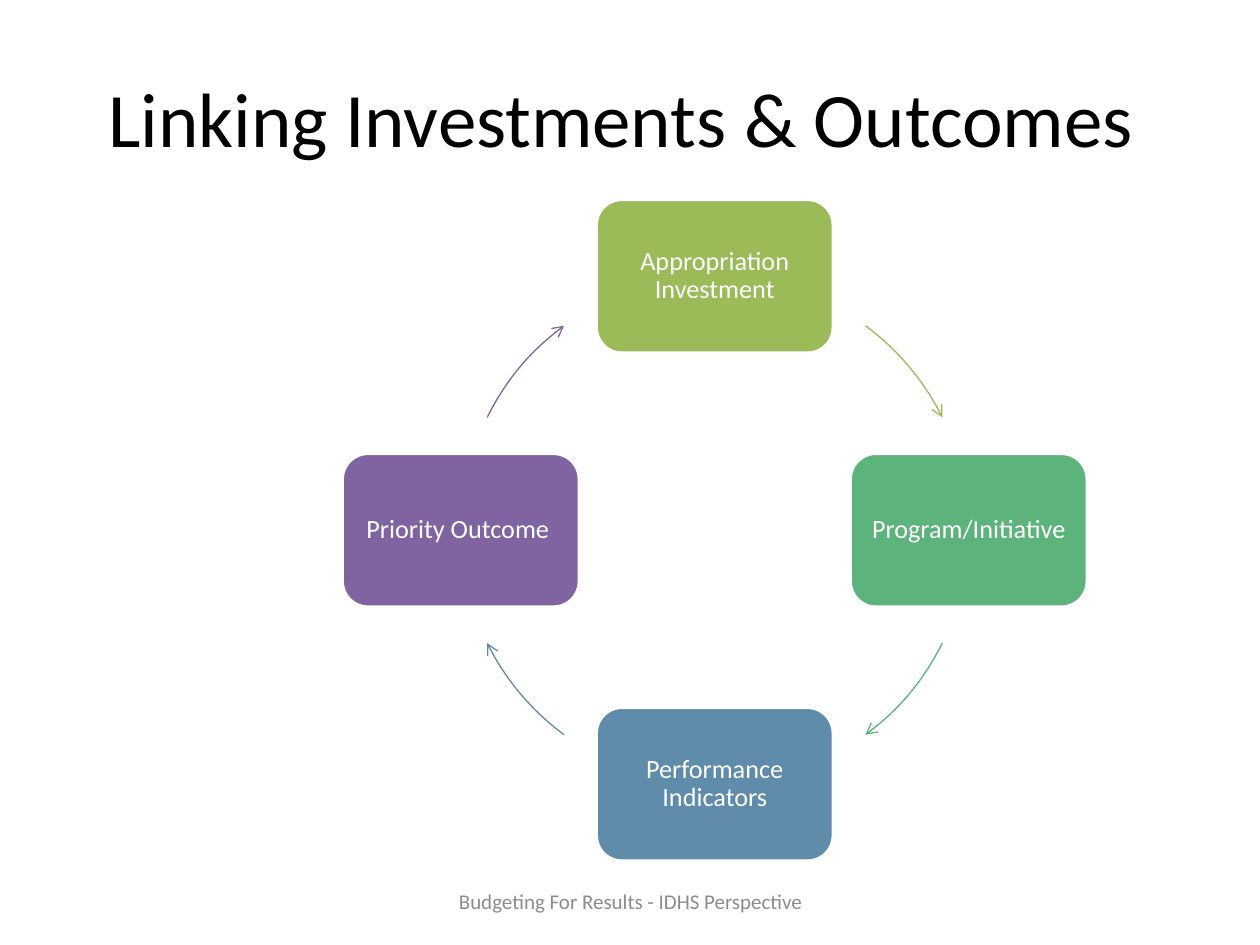
import math
from dataclasses import dataclass

import pptx
import pptx.dml.color
import pptx.enum.shapes
import pptx.enum.text
import pptx.oxml.ns
import pptx.util
from lxml import etree
from pptx.util import Cm

SHAPES = pptx.enum.shapes.MSO_SHAPE


@dataclass(frozen=True)
class Theme:
    font: str = "Calibri"
    black: str = "000000"
    white: str = "FFFFFF"
    gray: str = "8C8C8C"
    green: str = "9BBB59"
    teal: str = "5CB37C"
    blue: str = "608CAB"
    purple: str = "8064A2"
    title_size: float = 44
    box_size: float = 15
    footer_size: float = 12
    box_line: float = 2
    arrow_line: float = 0.75


class SlideBuilder:
    def __init__(self, slide, theme):
        self.slide = slide
        self.theme = theme

    def color(self, value):
        return pptx.dml.color.RGBColor.from_string(value)

    def set_text(self, shape, text, size, color):
        """Put one centred paragraph in the middle of a shape."""
        frame = shape.text_frame
        frame.text = text
        frame.word_wrap = True
        frame.vertical_anchor = pptx.enum.text.MSO_ANCHOR.MIDDLE
        paragraph = frame.paragraphs[0]
        paragraph.alignment = pptx.enum.text.PP_ALIGN.CENTER
        font = paragraph.runs[0].font
        font.name = self.theme.font
        font.size = pptx.util.Pt(size)
        font.color.rgb = self.color(color)
        return frame

    def text(self, left, top, width, height, text, size, color):
        box = self.slide.shapes.add_textbox(Cm(left), Cm(top), Cm(width), Cm(height))
        self.set_text(box, text, size, color)

    def outline(self, shape, color, width):
        shape.shadow.inherit = False
        shape.line.color.rgb = self.color(color)
        shape.line.width = pptx.util.Pt(width)

    def box(self, center_x, center_y, width, height, text, fill):
        shape = self.slide.shapes.add_shape(
            SHAPES.ROUNDED_RECTANGLE,
            Cm(center_x - width / 2), Cm(center_y - height / 2), Cm(width), Cm(height))
        shape.fill.solid()
        shape.fill.fore_color.rgb = self.color(fill)
        self.outline(shape, self.theme.white, self.theme.box_line)
        frame = self.set_text(shape, text, self.theme.box_size, self.theme.white)
        frame.margin_left = frame.margin_right = Cm(0.15)
        frame.margin_top = frame.margin_bottom = Cm(0.15)
        frame.paragraphs[0].line_spacing = 0.9

    def arc_arrow(self, center_x, center_y, radius, start, end, color):
        """Draw a clockwise arc between two angles in degrees, arrowhead at its end."""
        arc = self.slide.shapes.add_shape(
            SHAPES.ARC, Cm(center_x - radius), Cm(center_y - radius),
            Cm(2 * radius), Cm(2 * radius))
        # Angles are stored in 60000ths of a degree, adjustments in 100000ths.
        arc.adjustments[0] = start % 360 * 0.6
        arc.adjustments[1] = end % 360 * 0.6
        arc.fill.background()
        self.outline(arc, color, self.theme.arrow_line)
        line = arc.element.spPr.get_or_add_ln()
        etree.SubElement(line, pptx.oxml.ns.qn("a:tailEnd"), type="arrow")


def main():
    presentation = pptx.Presentation()
    presentation.slide_width, presentation.slide_height = Cm(25.4), Cm(19.05)
    theme = Theme()
    builder = SlideBuilder(
        presentation.slides.add_slide(presentation.slide_layouts[6]), theme)

    builder.text(1.27, 0.76, 22.86, 3.18, "Linking Investments & Outcomes ",
                 theme.title_size, theme.black)

    center_x, center_y, radius = 14.41, 10.69, 5.12
    steps = [
        ("Appropriation Investment", theme.green),
        ("Program/Initiative", theme.teal),
        ("Performance Indicators", theme.blue),
        ("Priority Outcome ", theme.purple),
    ]
    # Arrows clear the wide top and bottom boxes by more than the side boxes.
    wide_gap, narrow_gap = 36.4, 26.4
    for index, (label, color) in enumerate(steps):
        angle = 90 * index - 90
        before, after = ((wide_gap, narrow_gap) if index % 2 == 0
                         else (narrow_gap, wide_gap))
        builder.box(center_x + radius * math.cos(math.radians(angle)),
                    center_y + radius * math.sin(math.radians(angle)),
                    4.78, 3.1, label, color)
        builder.arc_arrow(center_x, center_y, radius,
                          angle + before, angle + 90 - after, color)

    builder.text(8.69, 17.65, 8.05, 1.02, "Budgeting For Results - IDHS Perspective",
                 theme.footer_size, theme.gray)
    presentation.save("out.pptx")


if __name__ == "__main__":
    main()
